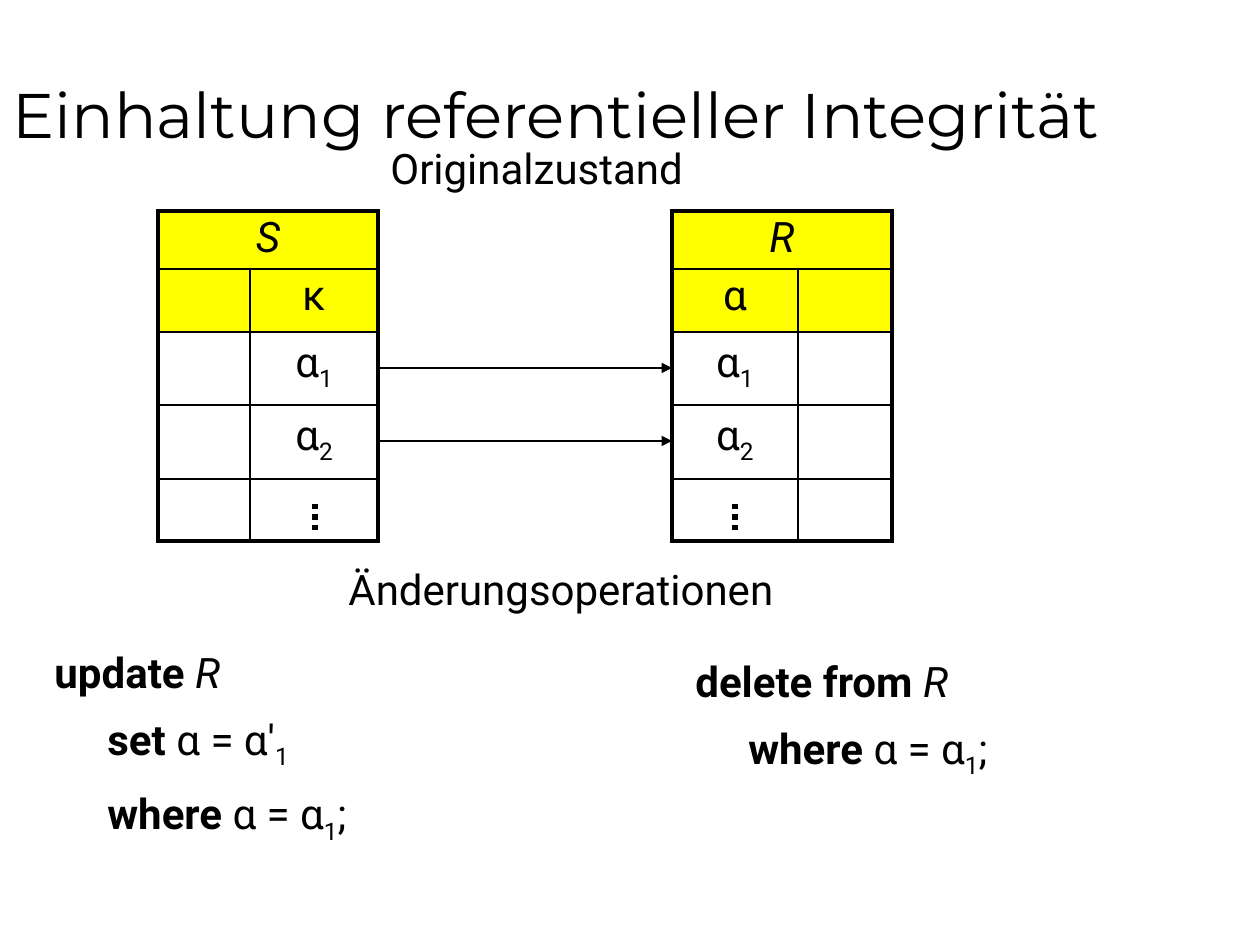
"""Builds the slide on referential integrity: two linked tables and two change operations."""
from lxml import etree
from pptx import Presentation
from pptx.dml.color import RGBColor
from pptx.enum.dml import MSO_LINE
from pptx.enum.shapes import MSO_CONNECTOR
from pptx.enum.text import MSO_ANCHOR, PP_ALIGN
from pptx.oxml.ns import qn
from pptx.util import Pt

PX = 914400 // 126
BLACK = RGBColor(0, 0, 0)
YELLOW = RGBColor(255, 255, 0)
STRAIGHT = MSO_CONNECTOR.STRAIGHT
DOTS = MSO_LINE.ROUND_DOT
CENTER = PP_ALIGN.CENTER
BOTTOM = MSO_ANCHOR.BOTTOM
THIN, THICK = Pt(1), Pt(2.25)
ROWS = [57, 63, 73, 74, 62]


def add_runs(p, runs, size=24, font="Roboto"):
    for text, style in runs:
        r = p.add_run()
        r.text = text
        r.font.name, r.font.size = font, Pt(size)
        r.font.color.rgb = BLACK
        r.font.bold, r.font.italic = style == "b", style == "i"
        if style == "sub":
            r.font._element.set("baseline", "-25000")


def add_line(x1, y1, x2, y2, width):
    line = s.shapes.add_connector(STRAIGHT, x1 * PX, y1 * PX, x2 * PX, y2 * PX)
    line.line.color.rgb = BLACK
    line.line.width = Pt(width)
    etree.SubElement(line._element.spPr, qn("a:effectLst"))
    return line


prs = Presentation()
prs.slide_width, prs.slide_height = 1260 * PX, 945 * PX
s = prs.slides.add_slide(prs.slide_layouts[6])

sp = s.shapes.add_textbox(0, 0, 1260 * PX, 157 * PX)
tf = sp.text_frame
tf.word_wrap = True
tf.vertical_anchor = BOTTOM
add_runs(tf.paragraphs[0], [("Einhaltung referentieller Integrität", "")], 36, "Montserrat")

tables = [
    (158, [92, 128], 1, "S", "κ"),
    (672, [126, 94], 0, "R", "α"),
]
for left, widths, key_col, name, key in tables:
    frame = s.shapes.add_table(5, 2, left * PX, 211 * PX, sum(widths) * PX, sum(ROWS) * PX)
    tbl = frame.table
    for col, width in zip(tbl.columns, widths):
        col.width = width * PX
    for row, height in zip(tbl.rows, ROWS):
        row.height = height * PX
    tbl.cell(0, 0).merge(tbl.cell(0, 1))
    contents = {
        (0, 0): [(name, "i")],
        (1, key_col): [(key, "")],
        (2, key_col): [("α", ""), ("1", "sub")],
        (3, key_col): [("α", ""), ("2", "sub")],
    }
    for i in range(5):
        for j in range(2):
            cell = tbl.cell(i, j)
            cell.margin_left = cell.margin_right = 0
            p = cell.text_frame.paragraphs[0]
            p.alignment, p.line_spacing = CENTER, 0.9
            add_runs(p, contents.get((i, j), []))
            tcPr = cell._tc.get_or_add_tcPr()
            outer = {"L": j == 0, "R": j == 1 or i == 0, "T": i == 0, "B": i == 4}
            for side, is_outer in outer.items():
                width = THICK if is_outer else THIN
                ln = etree.SubElement(tcPr, qn(f"a:ln{side}"), w=str(width))
                fill = etree.SubElement(ln, qn("a:solidFill"))
                etree.SubElement(fill, qn("a:srgbClr"), val=str(BLACK))
            if i < 2:
                cell.fill.solid()
                cell.fill.fore_color.rgb = YELLOW
            else:
                cell.fill.background()

for x in (315, 735):
    add_line(x, 504, x, 535, 3).line.dash_style = DOTS

for y in (368, 441):
    ln = add_line(378, y, 672, y, 0.75).line._get_or_add_ln()
    etree.SubElement(ln, qn("a:tailEnd"), type="triangle")

where = [("where", "b"), (" α = α", ""), ("1", "sub"), (";", "")]
texts = [
    (378, 136, 325, 63, [[("Originalzustand", "")]]),
    (336, 557, 451, 63, [[("Änderungsoperationen", "")]]),
    (42, 640, 536, 214, [
        [("update ", "b"), ("R", "i")],
        [("set ", "b"), ("α = α'", ""), ("1", "sub")],
        where,
    ]),
    (683, 649, 536, 139, [[("delete from ", "b"), ("R", "i")], where]),
]
for x, y, w, h, paragraphs in texts:
    sp = s.shapes.add_textbox(x * PX, y * PX, w * PX, h * PX)
    tf = sp.text_frame
    tf.word_wrap = True
    for n, runs in enumerate(paragraphs):
        p = tf.add_paragraph() if n else tf.paragraphs[0]
        p.space_before = Pt(9.6)
        if n:
            p._p.get_or_add_pPr().set("marL", str(53 * PX))
        add_runs(p, runs)

prs.save("out.pptx")
